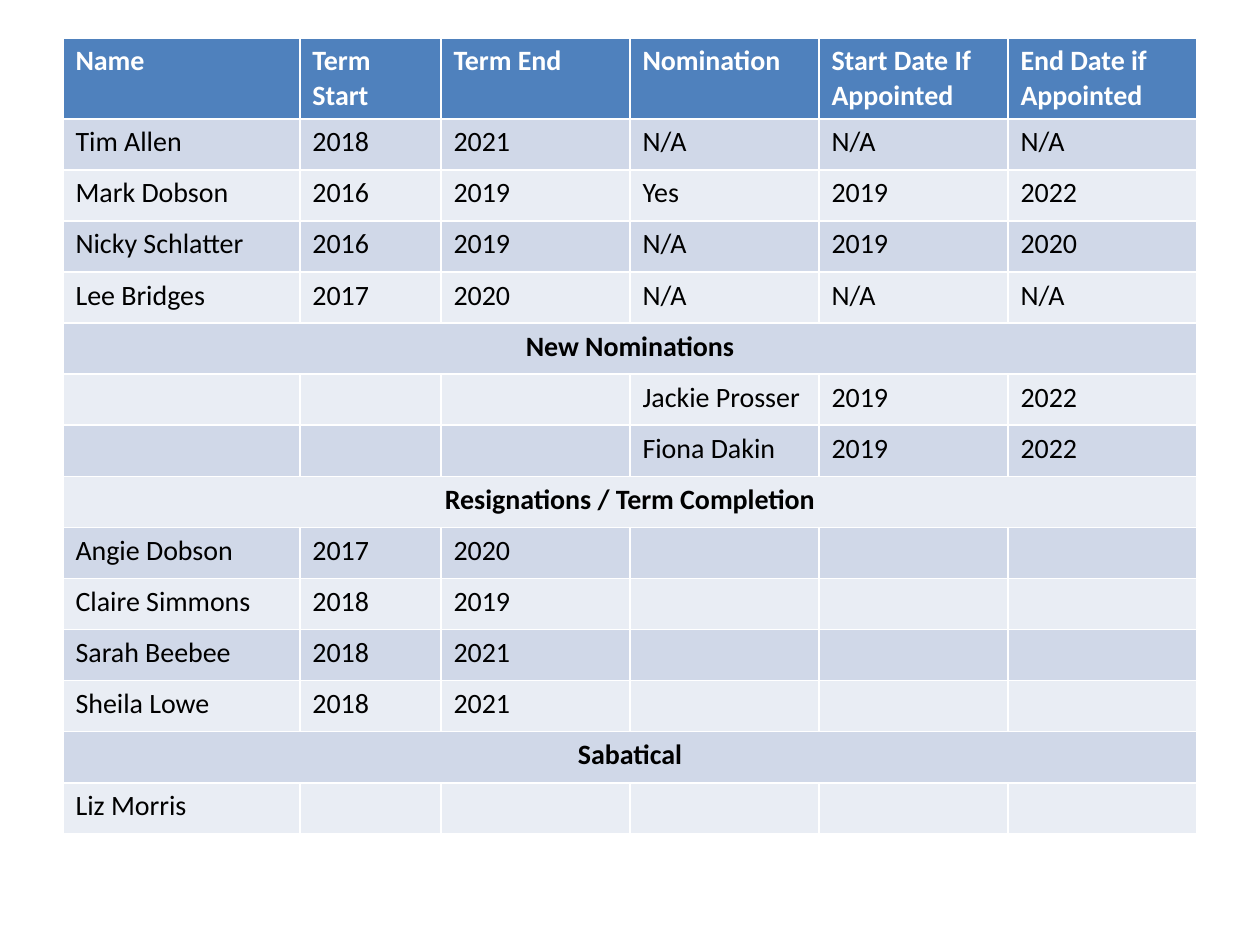
from dataclasses import dataclass

from pptx import Presentation
from pptx.dml.color import RGBColor
from pptx.enum import text
from pptx.util import Inches, Pt


@dataclass(frozen=True)
class Theme:
    font: str = "Calibri"
    size: int = 16
    header: str = "4F81BD"
    bands: tuple = ("D0D8E8", "E9EDF4")
    light: str = "FFFFFF"
    dark: str = "000000"


THEME = Theme()
COLUMN_WIDTHS = [1.88, 1.12, 1.5, 1.5, 1.5, 1.5]
HEADERS = ["Name", "Term Start", "Term End", "Nomination",
           "Start Date If Appointed", "End Date if Appointed"]
# A row with a single string is a section heading across the table.
ROWS = [
    ["Tim Allen", "2018", "2021", "N/A", "N/A", "N/A"],
    ["Mark Dobson", "2016", "2019", "Yes", "2019", "2022"],
    ["Nicky Schlatter", "2016", "2019", "N/A", "2019", "2020"],
    ["Lee Bridges", "2017", "2020", "N/A", "N/A", "N/A"],
    "New Nominations",
    ["", "", "", "Jackie Prosser", "2019", "2022"],
    ["", "", "", "Fiona Dakin", "2019", "2022"],
    "Resignations / Term Completion",
    ["Angie Dobson", "2017", "2020", "", "", ""],
    ["Claire Simmons", "2018", "2019", "", "", ""],
    ["Sarah Beebee", "2018", "2021", "", "", ""],
    ["Sheila Lowe", "2018", "2021", "", "", ""],
    "Sabatical",
    ["Liz Morris", "", "", "", "", ""],
]


def write(tf, content, color=THEME.dark, bold=False, align=None):
    p = tf.paragraphs[0]
    p.alignment = align
    r = p.add_run()
    r.text = content
    r.font.name = THEME.font
    r.font.size = Pt(THEME.size)
    r.font.bold = bold
    r.font.color.rgb = RGBColor.from_string(color)


def fill_row(cells, values, fill, **text_format):
    for cell, value in zip(cells, values):
        cell.fill.solid()
        cell.fill.fore_color.rgb = RGBColor.from_string(fill)
        if value:
            write(cell.text_frame, value, **text_format)


def add_section(cells, title, fill):
    cells[0].merge(cells[-1])
    blanks = [""] * (len(cells) - 1)
    fill_row(cells, [title, *blanks], fill, bold=True,
             align=text.PP_ALIGN.CENTER)


def add_terms_table(s):
    frame = s.shapes.add_table(len(ROWS) + 1, len(HEADERS), Inches(0.5),
                               Inches(0.3), Inches(9), Inches(6.08))
    table = frame.table
    for column, width in zip(table.columns, COLUMN_WIDTHS):
        column.width = Inches(width)
    header, *body = [list(row.cells) for row in table.rows]
    fill_row(header, HEADERS, THEME.header, color=THEME.light, bold=True)
    for i, (cells, values) in enumerate(zip(body, ROWS)):
        add_row = add_section if isinstance(values, str) else fill_row
        add_row(cells, values, THEME.bands[i % 2])


def main():
    prs = Presentation()
    prs.slide_width, prs.slide_height = Inches(10), Inches(7.5)
    s = prs.slides.add_slide(prs.slide_layouts[6])
    add_terms_table(s)
    prs.save("out.pptx")


if __name__ == "__main__":
    main()
